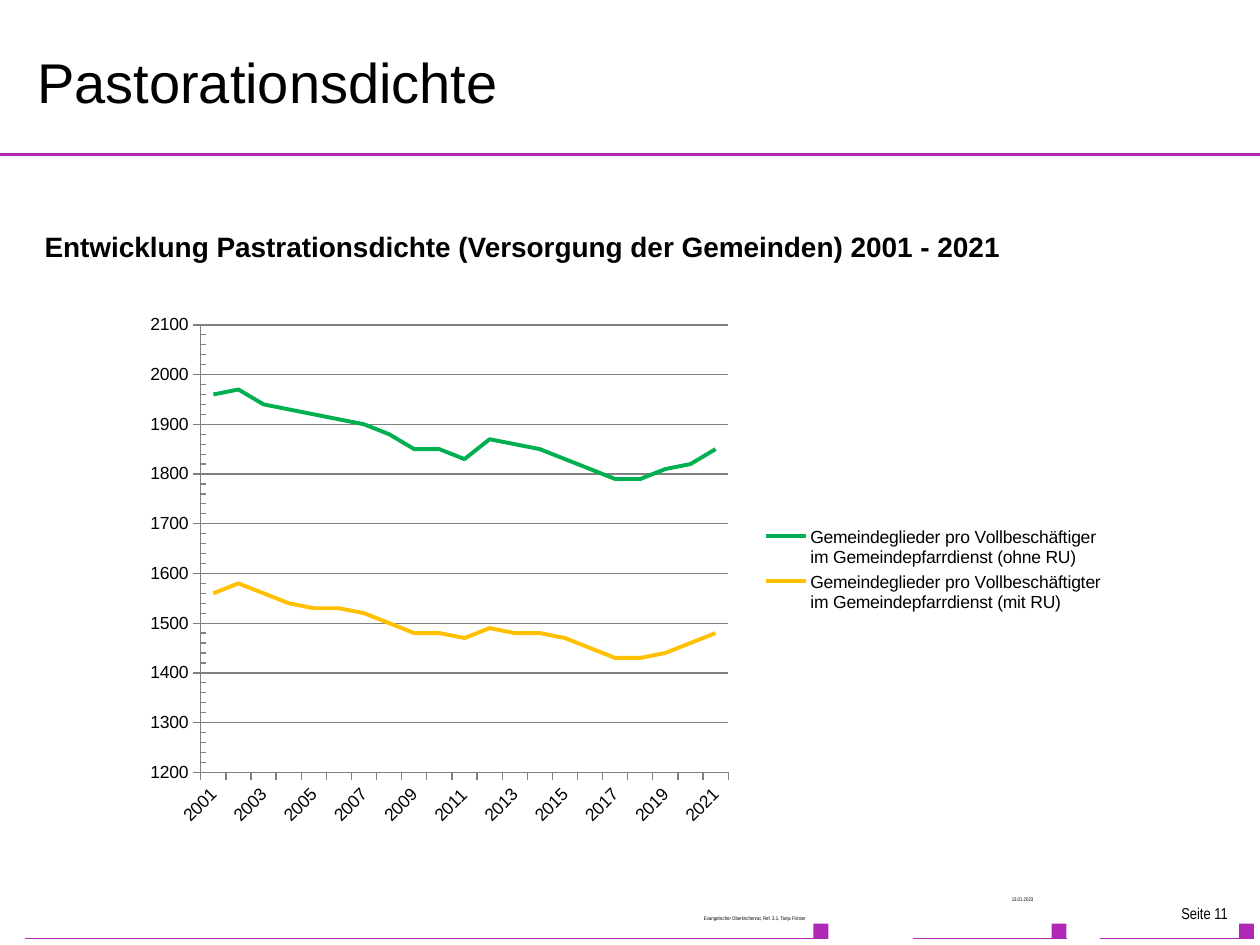
"""Build the slide on pastoral density with its line chart."""
from lxml.etree import SubElement
from pptx import Presentation
from pptx.chart.data import CategoryChartData as ChartData
from pptx.dml.color import RGBColor
from pptx.enum.chart import XL_CHART_TYPE as Kind, XL_LEGEND_POSITION as Spot, XL_TICK_MARK as Tick
from pptx.enum.shapes import MSO_CONNECTOR as Link, MSO_SHAPE as Shape
from pptx.enum.text import MSO_ANCHOR as Anchor, PP_ALIGN as Align
from pptx.oxml import parse_xml
from pptx.oxml.ns import qn
from pptx.util import Cm, Pt

PURPLE = RGBColor(0xB0, 0x28, 0xB6)
GREEN = RGBColor(0x00, 0xB0, 0x50)
AMBER = RGBColor(0xFF, 0xC0, 0x00)
GREY = RGBColor(0x80, 0x80, 0x80)
BLACK = RGBColor(0, 0, 0)

deck = Presentation()
deck.slide_width, deck.slide_height = Cm(25.4), Cm(19.05)
slide = deck.slides.add_slide(deck.slide_layouts[6])
shapes = slide.shapes


def add_rule(left, right, y, width):
    rule = shapes.add_connector(Link.STRAIGHT, Cm(left), Cm(y), Cm(right), Cm(y))
    rule.line.color.rgb = PURPLE
    rule.line.width = Pt(width)
    SubElement(rule._element.spPr, qn("a:effectLst"))


def add_text(text, left, top, width, height, size, face="Arial"):
    box = shapes.add_textbox(Cm(left), Cm(top), Cm(width), Cm(height))
    box.text_frame.word_wrap = True
    para = box.text_frame.paragraphs[0]
    para.text = text
    para.font.name = face
    para.font.size = Pt(size)
    para.font.color.rgb = BLACK
    return box.text_frame, para


add_rule(0, 25.4, 3.12, 1.5)
side = 0.3
for left, right in [(0.5, 16.7), (18.4, 21.5), (22.18, 25.28)]:
    add_rule(left, right, 18.92, 0.75)
    block = shapes.add_shape(
        Shape.RECTANGLE, Cm(right - side), Cm(18.92 - side), Cm(side), Cm(side))
    block.shadow.inherit = False
    block.fill.solid()
    block.fill.fore_color.rgb = PURPLE
    block.line.fill.background()

frame, para = add_text("Pastorationsdichte", 0.5, 0.53, 20, 2.2, 32)
frame.vertical_anchor = Anchor.MIDDLE

frame, para = add_text(
    "Entwicklung Pastrationsdichte (Versorgung der Gemeinden) 2001 - 2021",
    0.65, 4.57, 23.85, 1, 16)
para.font.bold = True
para.line_spacing = 0.9

for text, left, top, width, height, size in [
    ("13.01.2023", 17.35, 17.96, 3.73, 0.74, 3),
    ("Evangelischer Oberkirchenrat, Ref. 3.1, Tanja Förster", 0.89, 18.34, 15.6, 0.4, 3),
    ("Seite 11", 21.9, 18.14, 3.1, 0.6, 9),
]:
    frame, para = add_text(text, left, top, width, height, size, "Arial Narrow")
    para.alignment = Align.RIGHT
    para.line_spacing = 0.9
    para.space_after = Pt(6)

data = ChartData(number_format="0")
data.categories = [str(year) for year in range(2001, 2022)]
data.add_series(
    "Gemeindeglieder pro Vollbeschäftiger im Gemeindepfarrdienst (ohne RU)",
    [1960, 1970, 1940, 1930, 1920, 1910, 1900, 1880, 1850, 1850, 1830,
     1870, 1860, 1850, 1830, 1810, 1790, 1790, 1810, 1820, 1850])
data.add_series(
    "Gemeindeglieder pro Vollbeschäftigter im Gemeindepfarrdienst (mit RU)",
    [1560, 1580, 1560, 1540, 1530, 1530, 1520, 1500, 1480, 1480, 1470,
     1490, 1480, 1480, 1470, 1450, 1430, 1430, 1440, 1460, 1480])
chart = shapes.add_chart(
    Kind.LINE, Cm(2.67), Cm(6.12), Cm(19.69), Cm(10.74), data).chart
chart.has_title = False
chart.font.name = "Arial"
chart.font.size = Pt(10)
chart.font.color.rgb = BLACK
plot = chart.plots[0]
plot.vary_by_categories = False
for line, tint in zip(plot.series, (GREEN, AMBER)):
    line.smooth = False
    line.format.line.color.rgb = tint
    line.format.line.width = Pt(2.25)

years, scale = chart.category_axis, chart.value_axis
scale.minimum_scale, scale.maximum_scale = 1200, 2100
scale.major_unit, scale.minor_unit = 100, 20
scale.minor_tick_mark = Tick.INSIDE
scale.has_major_gridlines = True
scale.tick_labels.number_format = "0"
scale.tick_labels.number_format_is_linked = False
for axis in (years, scale):
    axis.major_tick_mark = Tick.OUTSIDE
for item in (years, scale, scale.major_gridlines):
    item.format.line.color.rgb = GREY
    item.format.line.width = Pt(0.75)

years.tick_labels.font.size = Pt(10)
years._element.find(qn("c:txPr")).find(qn("a:bodyPr")).set("rot", "-2700000")
space = "http://schemas.openxmlformats.org/drawingml/2006/chart"
skip = parse_xml(f'<c:tickLblSkip xmlns:c="{space}" val="2"/>')
years._element.find(qn("c:noMultiLvlLbl")).addprevious(skip)

chart.has_legend = True
legend = chart.legend
legend.position = Spot.RIGHT
legend.include_in_layout = False
area = chart._chartSpace.chart.plotArea
for old in area.findall(qn("c:layout")) + legend._element.findall(qn("c:layout")):
    old.getparent().remove(old)
for owner, inner, sizes in [
    (area, '<c:layoutTarget val="inner"/>', (0.07, 0.04, 0.54, 0.84)),
    (legend._element, "", (0.64, 0.41, 0.36, 0.18)),
]:
    modes = "".join(f'<c:{key}Mode val="edge"/>' for key in "xy")
    marks = "".join(f'<c:{key} val="{size}"/>' for key, size in zip("xywh", sizes))
    layout = parse_xml(
        f'<c:layout xmlns:c="{space}"><c:manualLayout>{inner}{modes}{marks}'
        "</c:manualLayout></c:layout>")
    owner.insert(0 if owner is area else 1, layout)

deck.save("out.pptx")
